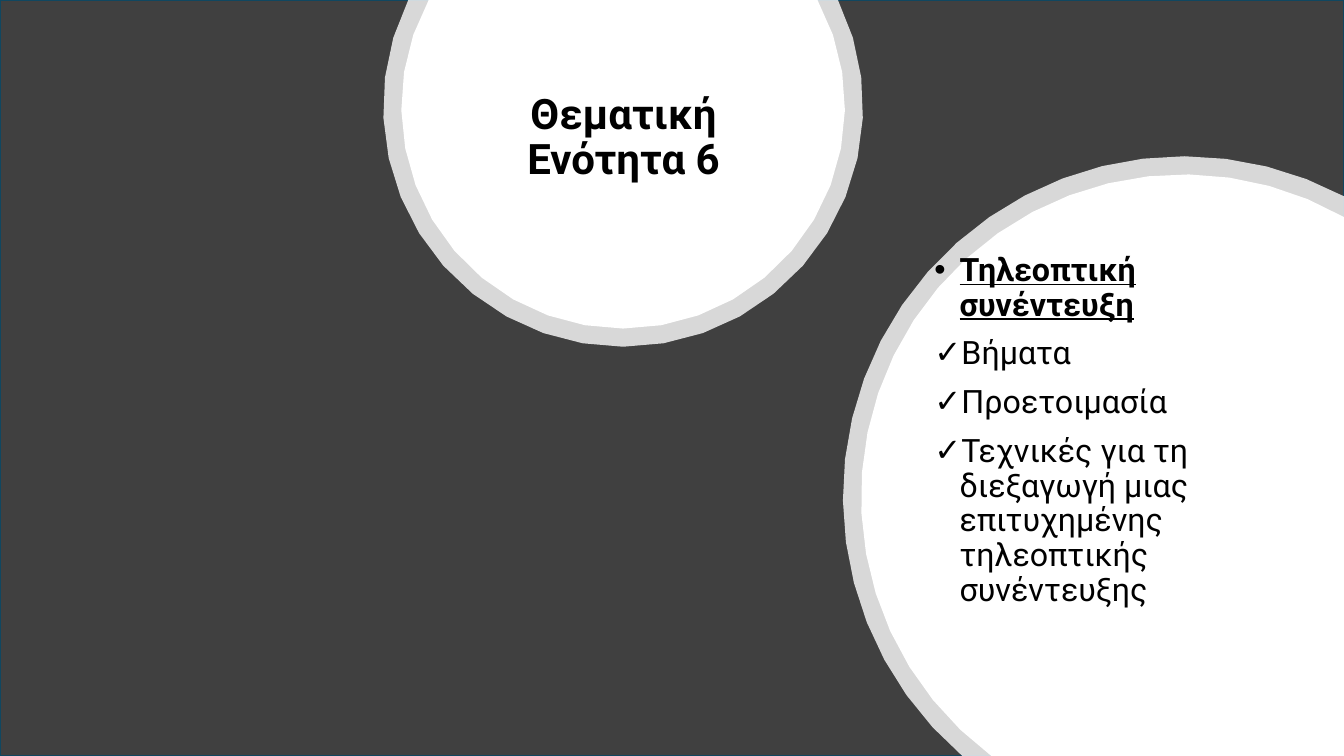
from math import acos, asin, cos, pi, sin, tau

from lxml import etree
from pptx import Presentation
from pptx import util as u
from pptx.dml.color import RGBColor
from pptx.enum import shapes, text
from pptx.oxml.ns import qn

TITLE = "Θεματική Ενότητα 6"
ITEMS = [
    ("•", "Τηλεοπτική συνέντευξη"),
    ("✓", "Βήματα"),
    ("✓", "Προετοιμασία"),
    ("✓", "Τεχνικές για τη διεξαγωγή μιας επιτυχημένης τηλεοπτικής συνέντευξης"),
]

WIDE, HIGH = 13.33, 7.5
RING = 0.18
TOP_DISC = (6.18, 1.06, 2.38)  # centre x, centre y, radius
SIDE_DISC = (11.74, 4.93, 3.38)
TITLE_BOX = (4.61, 0.39, 3.15, 1.96)
LIST_BOX = (9.17, 2.07, 3.96, 4.41)
STEPS = 24

FONT = "Roboto"
DARK = RGBColor(0x40, 0x40, 0x40)
EDGE = RGBColor(0x10, 0x47, 0x60)
WHITE = RGBColor(0xFF, 0xFF, 0xFF)
BLACK = RGBColor(0, 0, 0)


def paint(shape, color):
    shape.shadow.inherit = False
    shape.fill.solid()
    shape.fill.fore_color.rgb = color


def arc(x, y, radius, start, end):
    turns = [start + (end - start) * i / STEPS for i in range(STEPS + 1)]
    return [(x + radius * cos(t), y + radius * sin(t)) for t in turns]


def top_dots(x, y, radius):
    """Outline of a circle cut by the slide's top edge."""
    cut = asin(y / radius)
    return arc(x, y, radius, -cut, pi + cut)


def side_dots(x, y, radius):
    """Outline of a circle cut by the slide's bottom right corner."""
    start = pi - asin((HIGH - y) / radius)
    end = tau - acos((WIDE - x) / radius)
    return arc(x, y, radius, start, end) + [(WIDE, HIGH)]


def add_disc(slide, dots, alpha=None):
    """Draw a white outline; alpha is a percentage."""
    dots = [(u.Inches(x), u.Inches(y)) for x, y in dots]
    pen = slide.shapes.build_freeform(*dots[0])
    pen.add_line_segments(dots[1:], close=True)
    disc = pen.convert_to_shape()
    paint(disc, WHITE)
    disc.line.fill.background()
    if alpha:
        tint = disc.fill._xPr.find(".//" + qn("a:srgbClr"))
        etree.SubElement(tint, qn("a:alpha")).set("val", str(alpha * 1000))


def place(shape, box):
    shape.left, shape.top, shape.width, shape.height = map(u.Inches, box)
    frame = shape.text_frame
    frame.word_wrap = True
    frame.auto_size = text.MSO_AUTO_SIZE.NONE
    frame.vertical_anchor = text.MSO_ANCHOR.MIDDLE
    return frame


def style(para, size, bold):
    para.line_spacing = 0.9
    para.space_before = u.Pt(10)
    for run in para.runs:
        font = run.font
        font.name, font.size, font.bold = FONT, u.Pt(size), bold
        font.color.rgb = BLACK


def add_bullet(para, mark):
    props = para._p.get_or_add_pPr()
    props.set("marL", str(u.Inches(0.25)))
    props.set("indent", str(-u.Inches(0.25)))
    etree.SubElement(props, qn("a:buFont")).set("typeface", "Arial")
    etree.SubElement(props, qn("a:buChar")).set("char", mark)


def main():
    deck = Presentation()
    deck.slide_width, deck.slide_height = u.Inches(WIDE), u.Inches(HIGH)
    slide = deck.slides.add_slide(deck.slide_layouts[5])

    back = slide.shapes.add_shape(
        shapes.MSO_SHAPE.RECTANGLE, 0, 0, deck.slide_width, deck.slide_height)
    paint(back, DARK)
    back.line.color.rgb = EDGE
    back.line.width = u.Pt(1.5)

    for trim, alpha in ((0, 80), (RING, None)):
        for outline, (x, y, radius) in ((top_dots, TOP_DISC),
                                        (side_dots, SIDE_DISC)):
            add_disc(slide, outline(x, y, radius - trim), alpha)

    title = slide.shapes.title
    slide.shapes._spTree.append(title._element)  # bring to front
    frame = place(title, TITLE_BOX)
    frame.text = TITLE
    frame.paragraphs[0].alignment = text.PP_ALIGN.CENTER
    style(frame.paragraphs[0], 30, True)

    frame = place(slide.shapes.add_textbox(0, 0, 0, 0), LIST_BOX)
    frame.text = "\n".join(words for _, words in ITEMS)
    for i, (para, (mark, _)) in enumerate(zip(frame.paragraphs, ITEMS)):
        style(para, 23, i == 0)
        para.runs[0].font.underline = i == 0
        add_bullet(para, mark)

    deck.save("out.pptx")


if __name__ == "__main__":
    main()
